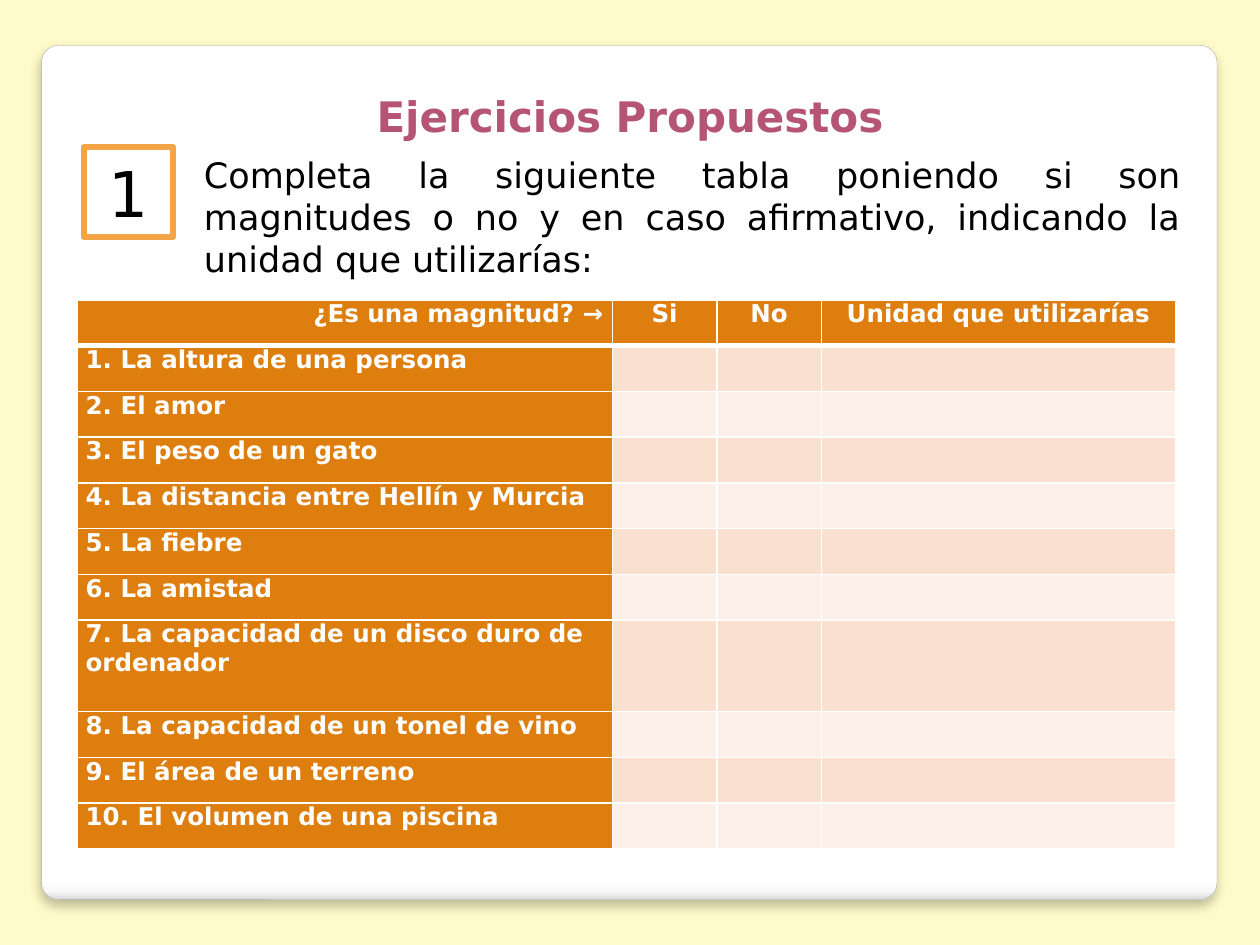
from dataclasses import dataclass
from typing import Any

from lxml.etree import SubElement
from pptx import Presentation
from pptx.dml.color import RGBColor
from pptx.enum.shapes import MSO_SHAPE as Shape
from pptx.enum.text import MSO_ANCHOR as Anchor, MSO_AUTO_SIZE as AutoSize, PP_ALIGN as Align
from pptx.oxml.ns import qn
from pptx.util import Inches, Pt

WIDTH, HEIGHT = Inches(10), Inches(7.5)


@dataclass(frozen=True)
class Theme:
    font: str = "DejaVu Sans"
    background: str = "FEFAC9"
    white: str = "FFFFFF"
    black: str = "000000"
    title: str = "B55475"
    frame: str = "F3A447"
    panel_line: str = "A4A4A4"
    heading: str = "DD7E0E"
    bands: tuple[str, str] = ("FAE0CF", "FDF0E9")
    panel_stops: tuple[tuple[int, str], ...] = (
        (0, "FFFFFF"), (98, "FFFFFF"), (99, "F7F7F7"), (100, "DADADA"))
    title_size: int = 24
    number_size: int = 36
    prompt_size: int = 20
    table_size: int = 14


@dataclass(frozen=True)
class Box:
    """A rectangle in percent of the slide's width and height."""
    x: float
    y: float
    w: float
    h: float

    def emu(self) -> tuple[int, int, int, int]:
        return (int(WIDTH * self.x / 100), int(HEIGHT * self.y / 100),
                int(WIDTH * self.w / 100), int(HEIGHT * self.h / 100))


@dataclass(frozen=True)
class Label:
    text: str
    size: int
    color: str
    align: Align = Align.LEFT
    bold: bool = False


THEME = Theme()
PANEL = Box(3.3, 4.8, 93.3, 90.4)
TITLE = Box(3.9, 8.93, 92.2, 6.67)
NUMBER = Box(6.65, 15.6, 7.1, 9.47)
PROMPT = Box(15.2, 15.6, 79.5, 14.8)
TABLE = Box(6.1, 31.73, 87.2, 58.13)
COLUMN_SHARES = (4.25, 0.83, 0.83, 2.81)

HEADERS = ("¿Es una magnitud? →", "Si", "No", "Unidad que utilizarías")
ITEMS = (
    "La altura de una persona",
    "El amor",
    "El peso de un gato",
    "La distancia entre Hellín y Murcia",
    "La fiebre",
    "La amistad",
    "La capacidad de un disco duro de ordenador",
    "La capacidad de un tonel de vino",
    "El área de un terreno",
    "El volumen de una piscina",
)
TALL_ROW = 7


def rgb(color: str) -> RGBColor:
    return RGBColor.from_string(color)


def set_all(target: Any, values: dict[str, Any]) -> None:
    for name, value in values.items():
        setattr(target, name, value)


def write(tf: Any, label: Label) -> None:
    p = tf.paragraphs[0]
    p.alignment = label.align
    r = p.add_run()
    r.text = label.text
    set_all(r.font, {"name": THEME.font, "size": Pt(label.size), "bold": label.bold})
    r.font.color.rgb = rgb(label.color)


def add_color(parent: Any, color: str) -> Any:
    return SubElement(parent, qn("a:srgbClr"), val=color)


def add_box(s: Any, kind: Shape, box: Box, line: str, line_width: float) -> Any:
    sp = s.shapes.add_shape(kind, *box.emu())
    sp.shadow.inherit = False
    sp.fill.solid()
    sp.fill.fore_color.rgb = rgb(THEME.white)
    sp.line.color.rgb = rgb(line)
    sp.line.width = Pt(line_width)
    return sp


def add_panel(s: Any) -> None:
    """Draw the rounded sheet with its shaded foot and soft shadow."""
    sp = add_box(s, Shape.ROUNDED_RECTANGLE, PANEL, THEME.panel_line, 0.16)
    sp.adjustments[0] = 0.02
    sp.fill.gradient()
    sp.fill.gradient_angle = 270
    props = sp._element.spPr
    stops = props.find(".//" + qn("a:gsLst"))
    for stop in list(stops):
        stops.remove(stop)
    for percent, color in THEME.panel_stops:
        add_color(SubElement(stops, qn("a:gs"), pos=str(percent * 1000)), color)
    shadow = SubElement(props.find(qn("a:effectLst")), qn("a:outerShdw"),
                        blurRad=str(Pt(6)), dist=str(Pt(4)), dir=str(90 * 60000),
                        algn="t", rotWithShape="0")
    SubElement(add_color(shadow, THEME.black), qn("a:alpha"), val="25000")


def add_text(s: Any, box: Box, label: Label) -> None:
    tf = s.shapes.add_textbox(*box.emu()).text_frame
    set_all(tf, {"word_wrap": True, "auto_size": AutoSize.SHAPE_TO_FIT_TEXT})
    write(tf, label)


def add_number(s: Any, text: str) -> None:
    sp = add_box(s, Shape.RECTANGLE, NUMBER, THEME.frame, 3.35)
    set_all(sp.text_frame, {"word_wrap": True, "vertical_anchor": Anchor.MIDDLE})
    write(sp.text_frame, Label(text, THEME.number_size, THEME.black, Align.CENTER))


def style_cell(cell: Any, fill: str, bottom: float, top: float) -> None:
    set_all(cell, {"margin_left": Inches(0.07), "margin_right": Inches(0.07),
                   "margin_top": 0, "margin_bottom": 0})
    props = cell._tc.get_or_add_tcPr()
    for side, width in {"L": 1, "R": 1, "T": top, "B": bottom}.items():
        ln = SubElement(props, qn(f"a:ln{side}"), w=str(Pt(width)))
        add_color(SubElement(ln, qn("a:solidFill")), THEME.white)
    cell.fill.solid()
    cell.fill.fore_color.rgb = rgb(fill)


def add_exercise_table(s: Any) -> None:
    rows, cols = len(ITEMS) + 1, len(HEADERS)
    table = s.shapes.add_table(rows, cols, *TABLE.emu()).table
    set_all(table, {"first_row": False, "horz_banding": False})
    _, _, width, height = TABLE.emu()
    for column, share in zip(table.columns, COLUMN_SHARES):
        column.width = int(width * share / sum(COLUMN_SHARES))
    for i, row in enumerate(table.rows):
        row.height = height // (rows + 1) * (2 if i == TALL_ROW else 1)
        texts = HEADERS if i == 0 else (f"{i}. {ITEMS[i - 1]}",)
        for j, cell in enumerate(row.cells):
            fill = THEME.heading if 0 in (i, j) else THEME.bands[(i - 1) % 2]
            style_cell(cell, fill, bottom=3 if i == 0 else 1, top=3 if i == 1 else 1)
            if j < len(texts):
                align = Align.LEFT if i else Align.CENTER if j else Align.RIGHT
                write(cell.text_frame,
                      Label(texts[j], THEME.table_size, THEME.white, align, True))


def main() -> None:
    prs = Presentation()
    set_all(prs, {"slide_width": WIDTH, "slide_height": HEIGHT})
    s = prs.slides.add_slide(prs.slide_layouts[6])
    s.background.fill.solid()
    s.background.fill.fore_color.rgb = rgb(THEME.background)
    add_panel(s)
    add_text(s, TITLE, Label("Ejercicios Propuestos", THEME.title_size, THEME.title,
                             Align.CENTER, True))
    add_number(s, "1")
    add_text(s, PROMPT, Label(
        "Completa la siguiente tabla poniendo si son magnitudes o no y en caso "
        "afirmativo, indicando la unidad que utilizarías:",
        THEME.prompt_size, THEME.black, Align.JUSTIFY))
    add_exercise_table(s)
    prs.save("out.pptx")


if __name__ == "__main__":
    main()
